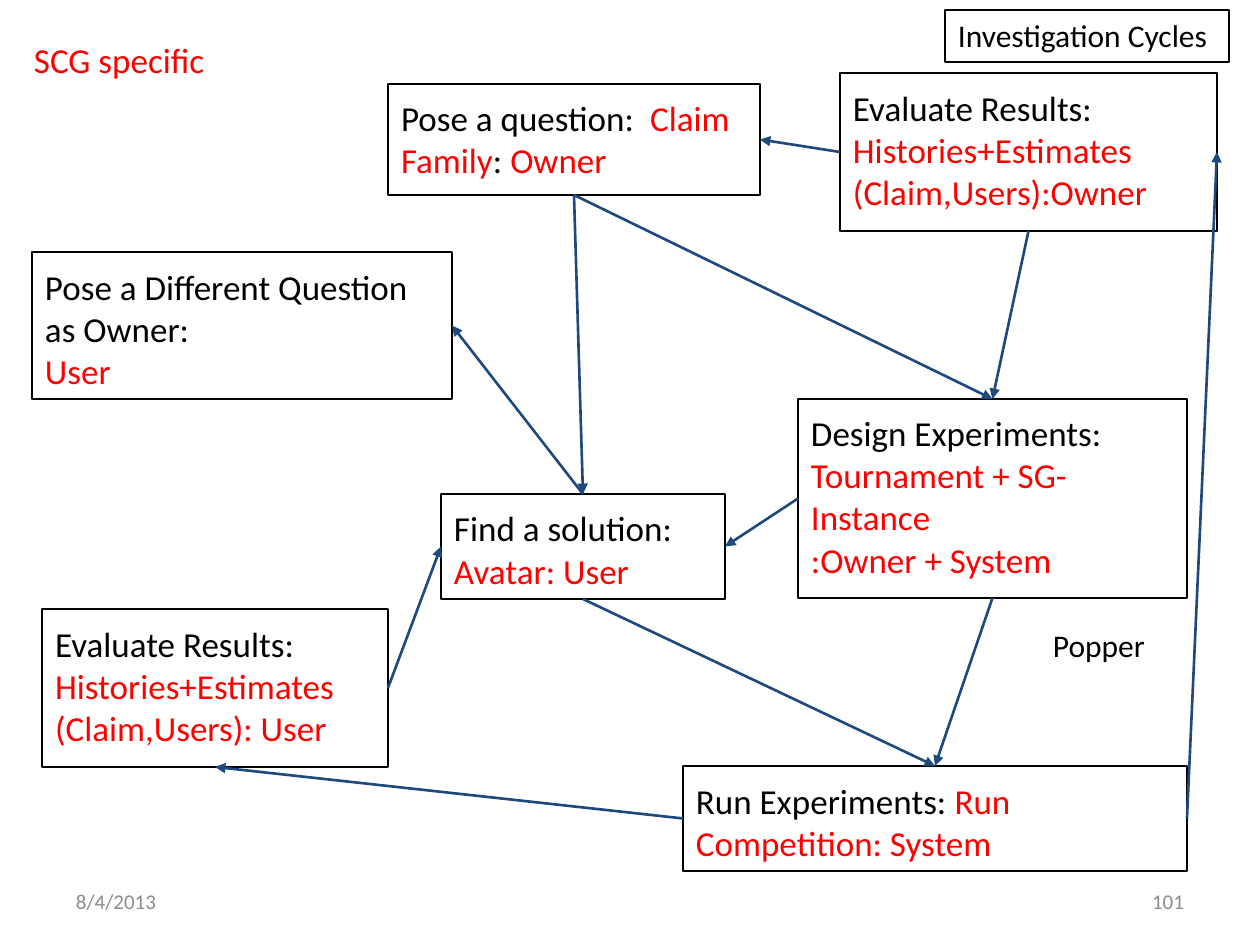
from dataclasses import dataclass

from lxml import etree
from pptx import Presentation
from pptx.dml.color import RGBColor
from pptx.enum.shapes import MSO_CONNECTOR, MSO_SHAPE
from pptx.enum.text import MSO_ANCHOR, MSO_AUTO_SIZE, PP_ALIGN
from pptx.oxml.ns import qn
from pptx.util import Emu, Pt

RECT = MSO_SHAPE.RECTANGLE
STRAIGHT = MSO_CONNECTOR.STRAIGHT
ANCHOR_TOP, ANCHOR_MIDDLE = MSO_ANCHOR.TOP, MSO_ANCHOR.MIDDLE
LEFT, RIGHT = PP_ALIGN.LEFT, PP_ALIGN.RIGHT
NO_FIT, GROW = MSO_AUTO_SIZE.NONE, MSO_AUTO_SIZE.SHAPE_TO_FIT_TEXT
SITE_TOP, SITE_LEFT, SITE_BOTTOM, SITE_RIGHT = range(4)
PX = 914400 / 126


@dataclass(frozen=True)
class Theme:
    font: str = "Calibri"
    ink: RGBColor = RGBColor(0, 0, 0)
    accent: RGBColor = RGBColor(255, 0, 0)
    arrow: RGBColor = RGBColor(0x1F, 0x49, 0x7D)
    muted: RGBColor = RGBColor(0x8C, 0x8C, 0x8C)
    body: int = 20
    label: int = 18
    footer: int = 12


T = Theme()


def px(*values):
    return [Emu(round(v * PX)) for v in values]


def write(tf, paragraphs, size, inset_y, align=LEFT, anchor=ANCHOR_TOP):
    tf.word_wrap = True
    tf.vertical_anchor = anchor
    tf.margin_left, tf.margin_right = px(13, 13)
    tf.margin_top, tf.margin_bottom = px(inset_y, inset_y)
    for i, runs in enumerate(paragraphs):
        p = tf.paragraphs[0] if i == 0 else tf.add_paragraph()
        p.alignment = align
        for text, color in runs:
            r = p.add_run()
            r.text = text
            r.font.name = T.font
            r.font.size = Pt(size)
            r.font.color.rgb = color


prs = Presentation()
prs.slide_width, prs.slide_height = px(1260, 945)
s = prs.slides.add_slide(prs.slide_layouts[5])

title = s.shapes.title
title.left, title.top, title.width, title.height = px(945, 10, 284, 52)
title.line.color.rgb = T.ink
title.line.width = Pt(0.75)
write(title.text_frame, [[("Investigation Cycles", T.ink)]], T.label, 6)
title.text_frame.auto_size = NO_FIT

steps = {
    "question": ((388, 84, 372, 111), [
        [("Pose a question:  ", T.ink), ("Claim Family", T.accent),
         (": ", T.ink), ("Owner", T.accent)]]),
    "design": ((798, 399, 389, 199), [
        [("Design Experiments:", T.ink)],
        [("Tournament + SG-Instance", T.accent)],
        [(":Owner + System", T.accent)]]),
    "solution": ((441, 494, 284, 105), [
        [("Find a solution:", T.ink)],
        [("Avatar: User", T.accent)]]),
    "user_results": ((42, 609, 346, 158), [
        [("Evaluate Results: ", T.ink),
         ("Histories+Estimates (Claim,Users): User", T.accent)]]),
    "run": ((683, 766, 504, 105), [
        [("Run Experiments: ", T.ink),
         ("Run Competition: System", T.accent)]]),
    "owner_results": ((840, 73, 377, 158), [
        [("Evaluate Results: ", T.ink),
         ("Histories+Estimates (Claim,Users):Owner", T.accent)]]),
    "new_question": ((32, 252, 420, 147), [
        [("Pose a Different Question as Owner:", T.ink)],
        [("User", T.accent)]]),
}
boxes = {}
for name, (bounds, paragraphs) in steps.items():
    sp = s.shapes.add_shape(RECT, *px(*bounds))
    sp.shadow.inherit = False
    sp.fill.background()
    sp.line.color.rgb = T.ink
    sp.line.width = Pt(0.75)
    write(sp.text_frame, paragraphs, T.body, 13)
    boxes[name] = sp

flows = [
    ("question", SITE_BOTTOM, "design", SITE_TOP),
    ("question", SITE_BOTTOM, "solution", SITE_TOP),
    ("owner_results", SITE_LEFT, "question", SITE_RIGHT),
    ("design", SITE_BOTTOM, "run", SITE_TOP),
    ("solution", SITE_BOTTOM, "run", SITE_TOP),
    ("run", SITE_LEFT, "user_results", SITE_BOTTOM),
    ("run", SITE_RIGHT, "owner_results", SITE_RIGHT),
    ("user_results", SITE_RIGHT, "solution", SITE_LEFT),
    ("owner_results", SITE_BOTTOM, "design", SITE_TOP),
    ("solution", SITE_TOP, "new_question", SITE_RIGHT),
    ("design", SITE_LEFT, "solution", SITE_RIGHT),
]
for source, source_site, target, target_site in flows:
    cx = s.shapes.add_connector(STRAIGHT, 0, 0, 0, 0)
    cx.begin_connect(boxes[source], source_site)
    cx.end_connect(boxes[target], target_site)
    cx.line.color.rgb = T.arrow
    cx.line.width = Pt(1.5)
    etree.SubElement(cx.line._get_or_add_ln(), qn("a:tailEnd"),
                     type="triangle", w="med", len="med")
    etree.SubElement(cx._element.spPr, qn("a:effectLst"))

labels = [
    ("SCG specific", (21, 32, 198, 55), T.body, T.accent, LEFT, ANCHOR_TOP, GROW),
    ("Popper", (1040, 620, 126, 52), T.label, T.ink, LEFT, ANCHOR_TOP, GROW),
    ("8/4/2013", (63, 876, 294, 50), T.footer, T.muted, LEFT, ANCHOR_MIDDLE, NO_FIT),
    ("101", (903, 876, 294, 50), T.footer, T.muted, RIGHT, ANCHOR_MIDDLE, NO_FIT),
]
for text, bounds, size, color, align, anchor, fit in labels:
    tb = s.shapes.add_textbox(*px(*bounds))
    write(tb.text_frame, [[(text, color)]], size, 6, align, anchor)
    tb.text_frame.auto_size = fit

prs.save("out.pptx")
